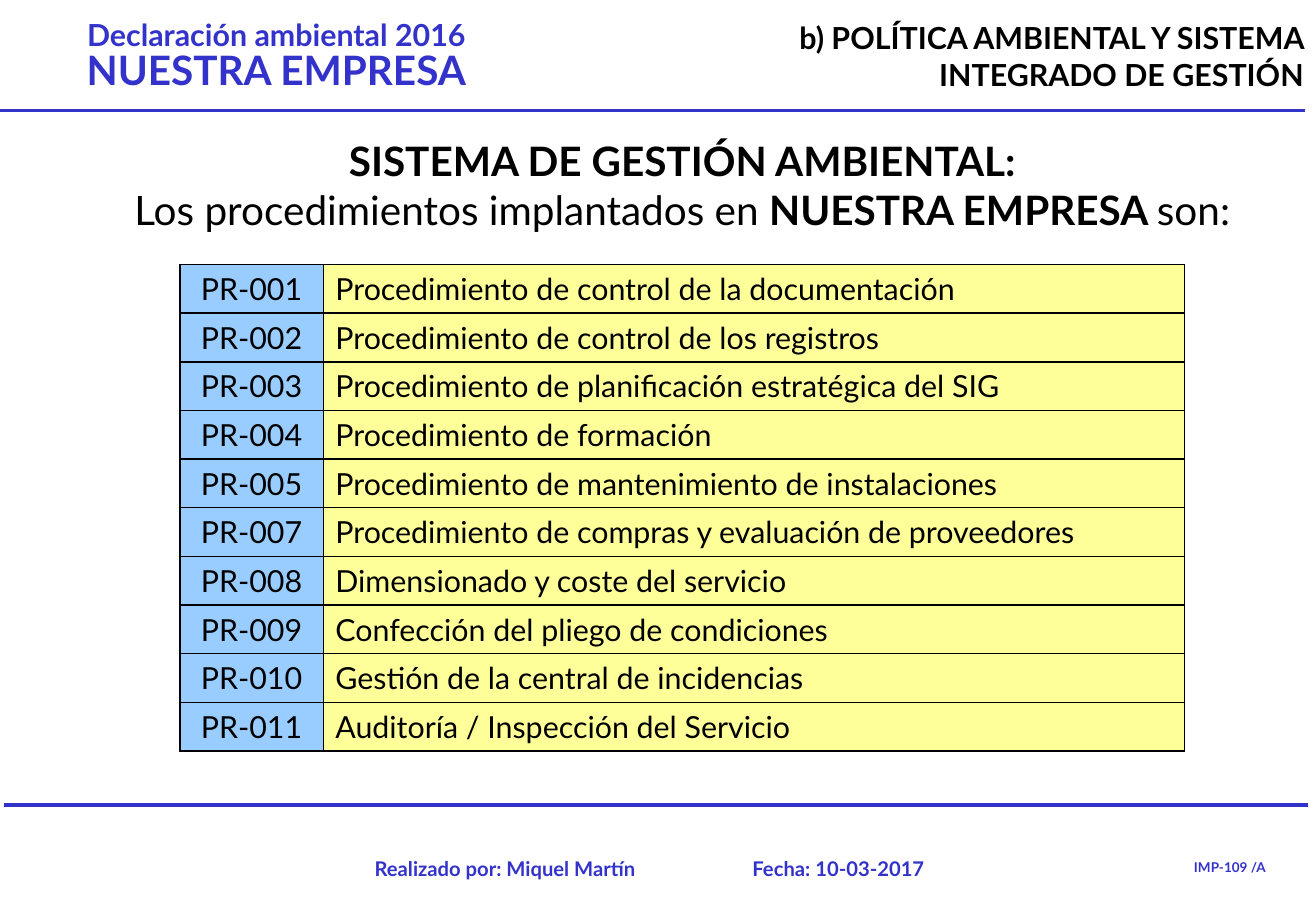
from pptx import Presentation
from pptx.dml.color import RGBColor
from pptx.enum.shapes import MSO_CONNECTOR
from pptx.enum.text import MSO_ANCHOR, MSO_AUTO_SIZE, PP_ALIGN
from pptx.oxml import parse_xml
from pptx.oxml.ns import nsdecls
from pptx.util import Pt
from lxml import etree

BLUE = RGBColor(0x33, 0x33, 0xCC)
BLACK = RGBColor(0, 0, 0)
SKY = RGBColor(0x99, 0xCC, 0xFF)
YELLOW = RGBColor(0xFF, 0xFF, 0x99)
CENTER, LEFT, RIGHT = PP_ALIGN.CENTER, PP_ALIGN.LEFT, PP_ALIGN.RIGHT
COMPANY = "NUESTRA EMPRESA"


def write(tf, paragraphs, align, color, spacing=1.0):
    for i, runs in enumerate(paragraphs):
        p = tf.add_paragraph() if i else tf.paragraphs[0]
        p.alignment, p.line_spacing = align, spacing
        p.space_before = Pt(0)
        for text, size, bold in runs:
            r = p.add_run()
            r.text = text
            for name, value in {"name": "Lato", "size": Pt(size), "bold": bold}.items():
                setattr(r.font, name, value)
            r.font.color.rgb = color


prs = Presentation()
prs.slide_width, prs.slide_height = Pt(780), Pt(540)
s = prs.slides.add_slide(prs.slide_layouts[5])

for x, y in [(0, 65.5), (2.2, 477.4)]:
    line = s.shapes.add_connector(MSO_CONNECTOR.STRAIGHT, Pt(x), Pt(y), Pt(x + 773.3), Pt(y))
    line.line.color.rgb = BLUE
    line.line.width = Pt(2.25)
    etree.SubElement(line._element.spPr, "{http://schemas.openxmlformats.org/drawingml/2006/main}effectLst")

title = s.shapes.title
title.left, title.top, title.width, title.height = Pt(50.4), Pt(77), Pt(708), Pt(64.8)
tf = title.text_frame
tf.auto_size, tf.word_wrap = MSO_AUTO_SIZE.NONE, True
tf.vertical_anchor = MSO_ANCHOR.MIDDLE
write(tf, [
    [("SISTEMA DE GESTIÓN AMBIENTAL:", 24, True)],
    [("Los procedimientos implantados en ", 24, False), (COMPANY + " ", 24, True), ("son:", 24, False)],
], CENTER, BLACK)

boxes = [
    (5.8, 9.4, 316, 50.4, CENTER, BLUE, 0.85,
     [[("Declaración ambiental 2016", 18, True)], [(COMPANY, 24, True)]]),
    (418.3, 7.9, 361.5, 50.4, RIGHT, BLACK, 1.0,
     [[("b) POLÍTICA AMBIENTAL Y SISTEMA INTEGRADO DE GESTIÓN", 18, True)]]),
    (203.8, 504, 180, 18, RIGHT, BLUE, 1.0, [[("Realizado por: Miquel Martín", 12, True)]]),
    (426, 504, 129, 18, RIGHT, BLUE, 1.0, [[("Fecha: 10-03-2017", 12, True)]]),
    (684, 505.4, 90, 18, CENTER, BLUE, 1.0, [[("IMP-109 /A", 8, True)]]),
]
for x, y, w, h, align, color, spacing, paragraphs in boxes:
    tf = s.shapes.add_textbox(Pt(x), Pt(y), Pt(w), Pt(h)).text_frame
    tf.word_wrap = True
    write(tf, paragraphs, align, color, spacing)

procedures = [
    ("PR-001", "Procedimiento de control de la documentación"),
    ("PR-002", "Procedimiento de control de los registros"),
    ("PR-003", "Procedimiento de planificación estratégica del SIG"),
    ("PR-004", "Procedimiento de formación"),
    ("PR-005", "Procedimiento de mantenimiento de instalaciones"),
    ("PR-007", "Procedimiento de compras y evaluación de proveedores"),
    ("PR-008", "Dimensionado y coste del servicio"),
    ("PR-009", "Confección del pliego de condiciones"),
    ("PR-010", "Gestión de la central de incidencias"),
    ("PR-011", "Auditoría / Inspección del Servicio"),
]
table = s.shapes.add_table(len(procedures), 2, Pt(106.6), Pt(156.8), Pt(595.5), Pt(288)).table
table.first_row = table.horz_banding = False
table.columns[0].width, table.columns[1].width = Pt(85), Pt(510.5)
for i, procedure in enumerate(procedures):
    table.rows[i].height = Pt(28.8)
    for j, (text, align, fill) in enumerate(zip(procedure, (CENTER, LEFT), (SKY, YELLOW))):
        cell = table.cell(i, j)
        write(cell.text_frame, [[(text, 18, False)]], align, BLACK)
        tcPr = cell._tc.get_or_add_tcPr()
        for side in ("lnL", "lnR", "lnT", "lnB"):
            tcPr.append(parse_xml(
                f'<a:{side} {nsdecls("a")} w="{Pt(1)}"><a:solidFill>'
                f'<a:srgbClr val="{BLACK}"/></a:solidFill></a:{side}>'))
        cell.fill.solid()
        cell.fill.fore_color.rgb = fill

prs.save("out.pptx")
